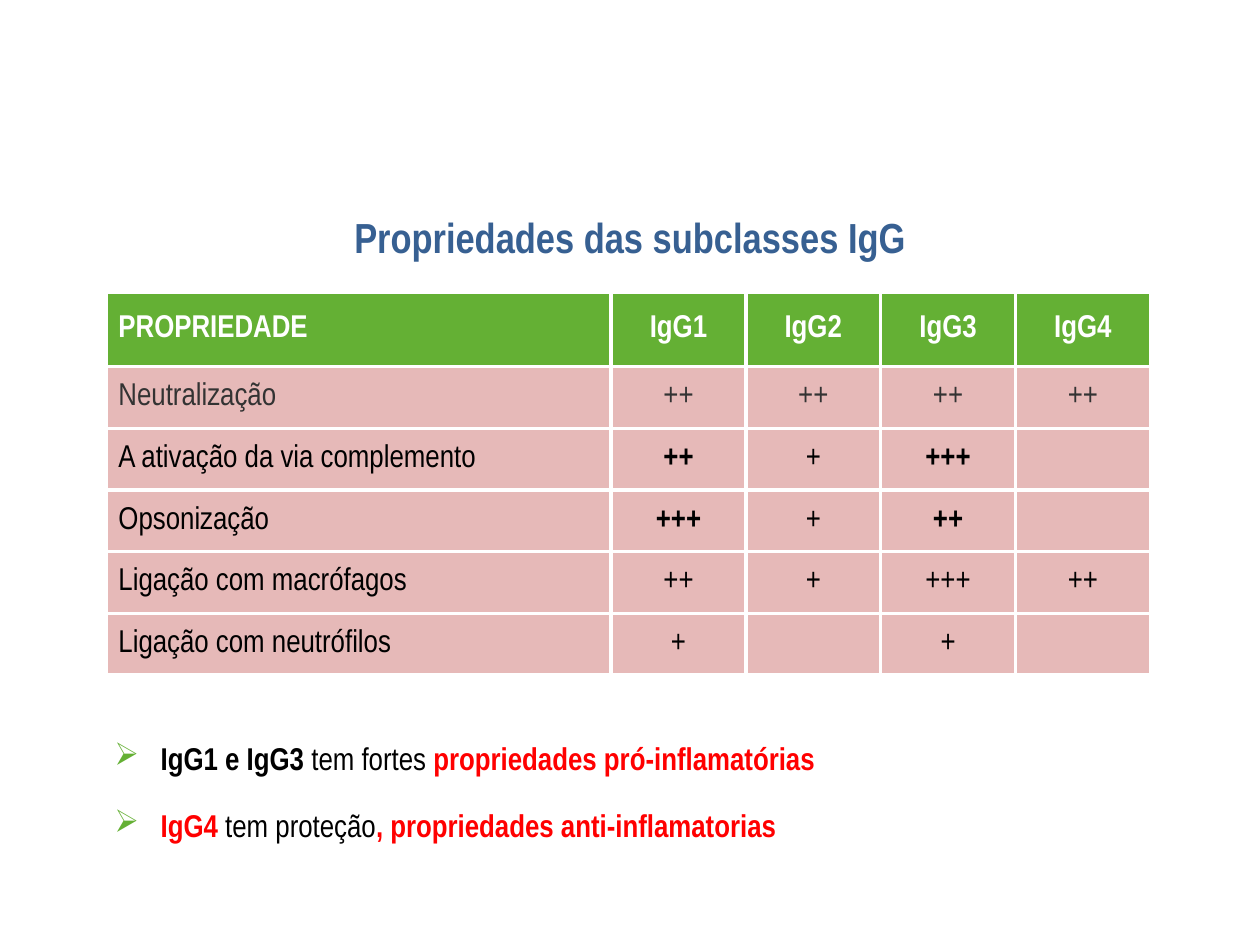
from dataclasses import dataclass

from lxml.etree import SubElement
from pptx import Presentation
from pptx.dml.color import RGBColor
from pptx.enum.text import MSO_ANCHOR, MSO_AUTO_SIZE, PP_ALIGN
from pptx.oxml import parse_xml
from pptx.oxml.ns import nsdecls, qn
from pptx.util import Inches, Pt


@dataclass(frozen=True)
class Theme:
    """Colours, font and type sizes of the slide."""
    font: str = "Arial Narrow"
    title_size: int = 24
    body_size: int = 18
    title: str = "376092"
    header: str = "64B034"
    body: str = "E6B9B8"
    white: str = "FFFFFF"
    black: str = "000000"
    grey: str = "333333"
    accent: str = "FF0000"
    border_width: float = 2.25


class SlideBuilder:
    """Places styled elements on the current slide."""

    def __init__(self, slide, theme):
        self.slide = slide
        self.theme = theme

    def style(self, run, color, bold=False, size=None):
        """Format one run."""
        run.font.name = self.theme.font
        run.font.size = Pt(size or self.theme.body_size)
        run.font.bold = bold
        run.font.color.rgb = RGBColor.from_string(color)

    def title(self, wording, left, top, width, height):
        """Fill and place the title placeholder."""
        heading = self.slide.shapes.title
        heading.left, heading.top = Inches(left), Inches(top)
        heading.width, heading.height = Inches(width), Inches(height)
        frame = heading.text_frame
        frame.text = wording
        frame.word_wrap = True
        frame.auto_size = MSO_AUTO_SIZE.SHAPE_TO_FIT_TEXT
        frame.vertical_anchor = MSO_ANCHOR.TOP
        frame.paragraphs[0].alignment = PP_ALIGN.CENTER
        self.style(frame.paragraphs[0].runs[0], self.theme.title, True, self.theme.title_size)

    def cell(self, cell, wording, fill, color, bold, centred):
        """Write, fill and border one table cell."""
        cell.fill.solid()
        cell.fill.fore_color.rgb = RGBColor.from_string(fill)
        cell.vertical_anchor = MSO_ANCHOR.MIDDLE
        properties = cell._tc.get_or_add_tcPr()
        for position, side in enumerate("LRTB"):
            properties.insert(position, parse_xml(
                f'<a:ln{side} {nsdecls("a")} w="{Pt(self.theme.border_width)}"><a:solidFill>'
                f'<a:srgbClr val="{self.theme.white}"/></a:solidFill></a:ln{side}>'))
        if wording:
            cell.text_frame.text = wording
            paragraph = cell.text_frame.paragraphs[0]
            paragraph.alignment = PP_ALIGN.CENTER if centred else PP_ALIGN.LEFT
            self.style(paragraph.runs[0], color, bold)

    def table(self, rows, bold_cells, left, top, widths, heights):
        """Add the table with its header row and body rows."""
        table = self.slide.shapes.add_table(
            len(rows), len(widths), Inches(left), Inches(top),
            Inches(sum(widths)), Inches(sum(heights))).table
        table.horz_banding = False
        for column, width in zip(table.columns, widths):
            column.width = Inches(width)
        row_colors = [self.theme.white, self.theme.grey]
        for r, (values, height) in enumerate(zip(rows, heights)):
            table.rows[r].height = Inches(height)
            fill = self.theme.body if r else self.theme.header
            color = row_colors[r] if r < len(row_colors) else self.theme.black
            for c, wording in enumerate(values):
                bold = r == 0 or (r, c) in bold_cells
                self.cell(table.cell(r, c), wording, fill, color, bold, c > 0)

    def bullet(self, parts, left, top, width, height, wrap):
        """Add a text box holding one arrow-bulleted line."""
        frame = self.slide.shapes.add_textbox(
            Inches(left), Inches(top), Inches(width), Inches(height)).text_frame
        frame.word_wrap = wrap
        frame.auto_size = MSO_AUTO_SIZE.SHAPE_TO_FIT_TEXT
        paragraph = frame.paragraphs[0]
        properties = paragraph._p.get_or_add_pPr()
        indent = Inches(0.31)
        properties.set("marL", str(indent))
        properties.set("indent", str(-indent))
        bullet_color = SubElement(properties, qn("a:buClr"))
        SubElement(bullet_color, qn("a:srgbClr"), val=self.theme.header)
        SubElement(properties, qn("a:buChar"), char="➢")
        for wording, color, bold in parts:
            run = paragraph.add_run()
            run.text = wording
            self.style(run, color, bold)


def main():
    """Build and save the slide."""
    theme = Theme()
    deck = Presentation()
    deck.slide_width, deck.slide_height = Inches(10), Inches(7.5)
    builder = SlideBuilder(deck.slides.add_slide(deck.slide_layouts[5]), theme)

    properties = [
        ("PROPRIEDADE", "IgG1", "IgG2", "IgG3", "IgG4"),
        ("Neutralização", "++", "++", "++", "++"),
        ("A ativação da via complemento", "++", "+", "+++", ""),
        ("Opsonização", "+++", "+", "++", ""),
        ("Ligação com macrófagos", "++", "+", "+++", "++"),
        ("Ligação com neutrófilos", "+", "", "+", ""),
    ]
    strong_effects = {(2, 1), (2, 3), (3, 1), (3, 3)}
    builder.table(properties, strong_effects, 0.84, 2.32,
                  [4.01] + [1.07] * 4, [0.59] + [0.49] * 5)

    builder.bullet([(" IgG1 e IgG3 ", theme.black, True),
                    ("tem fortes ", theme.black, False),
                    ("propriedades pró-inflamatórias", theme.accent, True)],
                   0.81, 5.82, 5.83, 0.4, wrap=False)
    builder.bullet([(" IgG4 ", theme.accent, True),
                    ("tem proteção", theme.black, False),
                    (", propriedades anti-inflamatorias", theme.accent, True)],
                   0.81, 6.35, 6.84, 0.4, wrap=True)
    builder.title("Propriedades das subclasses IgG", 0.78, 1.63, 8.44, 0.5)
    deck.save("out.pptx")


if __name__ == "__main__":
    main()
